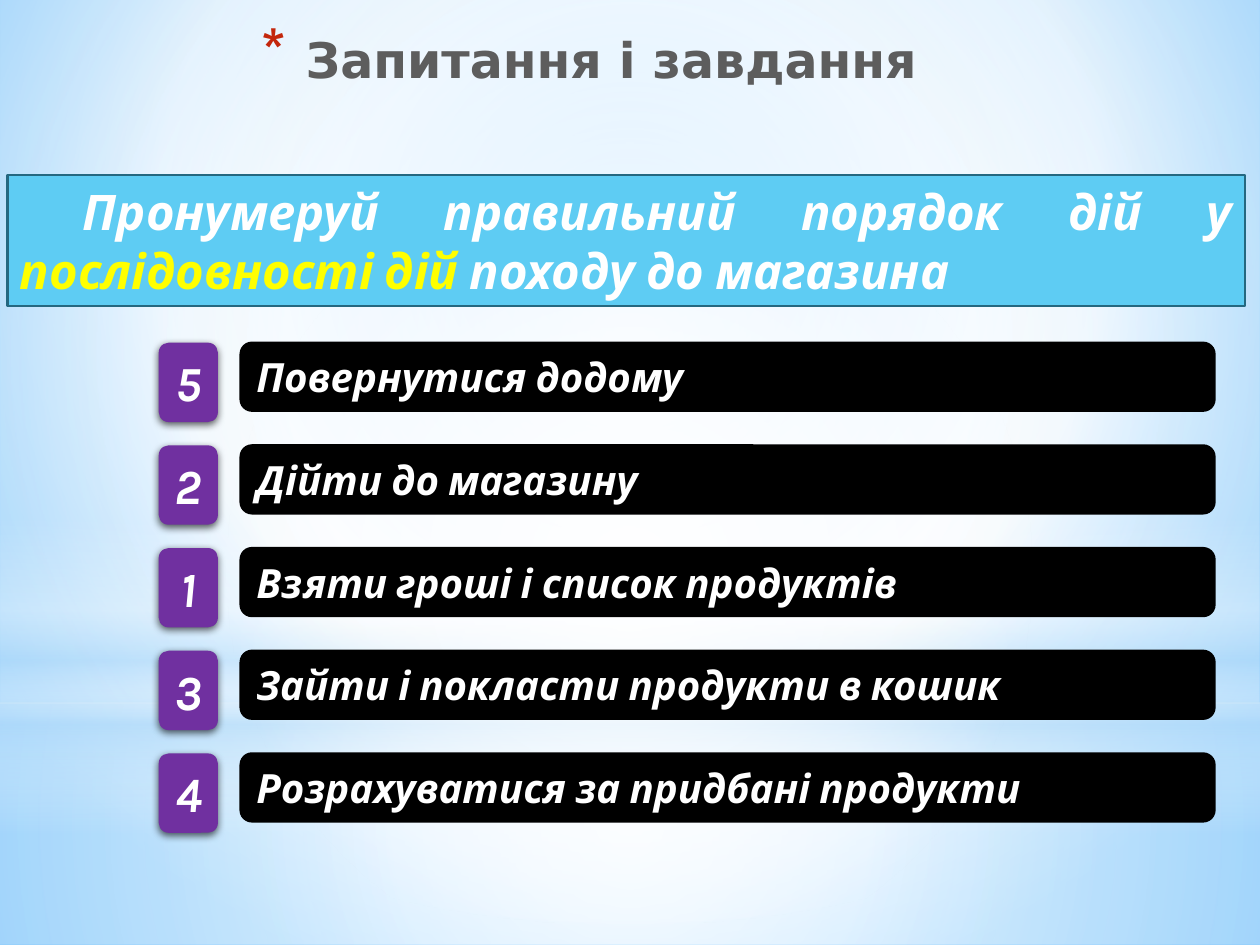
from lxml import etree
from pptx import Presentation
from pptx.dml.color import RGBColor
from pptx.enum.shapes import MSO_SHAPE as SHAPE
from pptx.enum.text import MSO_ANCHOR, MSO_AUTO_SIZE, PP_ALIGN as ALIGN
from pptx.oxml.ns import qn
from pptx.util import Inches, Pt

WHITE, SKY = "FFFFFF", "B4DCFA"
CENTER = (50, 50, 50, 50)
FIRST_ROW, ROW_STEP = 2.72, 0.815
ACTIONS = [
    ("5", "Повернутися додому"),
    ("2", "Дійти до магазину"),
    ("1", "Взяти гроші і список продуктів"),
    ("3", "Зайти і покласти продукти в кошик"),
    ("4", "Розрахуватися за придбані продукти"),
]


def rgb(color):
    return RGBColor.from_string(color)


def add_xml(parent, tag, **attrs):
    el = etree.SubElement(parent, qn(tag))
    for name, value in attrs.items():
        el.set(name, str(value))
    return el


def add_color(parent, color, alpha=100):
    el = add_xml(parent, "a:srgbClr", val=color)
    if alpha < 100:
        add_xml(el, "a:alpha", val=alpha * 1000)


def set_gradient(fill, owner, stops, focus=None):
    """Fill with (position, colour, opacity) stops, round a focus or downwards."""
    fill.solid()
    fill.fore_color.rgb = rgb(WHITE)
    solid = owner.find(qn("a:solidFill"))
    grad = etree.Element(qn("a:gradFill"), rotWithShape="1")
    stop_list = add_xml(grad, "a:gsLst")
    for pos, color, alpha in stops:
        add_color(add_xml(stop_list, "a:gs", pos=pos * 1000), color, alpha)
    if focus:
        path = add_xml(grad, "a:path", path="circle")
        sides = {side: share * 1000 for side, share in zip("ltrb", focus)}
        add_xml(path, "a:fillToRect", **sides)
    else:
        add_xml(grad, "a:lin", ang=90 * 60000, scaled=0)
    owner.replace(solid, grad)


def add_box(slide, kind, box, fill=None, line=None):
    sp = slide.shapes.add_shape(kind, *map(Inches, box))
    sp.shadow.inherit = False
    if fill:
        sp.fill.solid()
        sp.fill.fore_color.rgb = rgb(fill)
    if line:
        sp.line.color.rgb = rgb(line)
        sp.line.width = Pt(1.25)
    else:
        sp.line.fill.background()
    return sp


def add_glow(slide, kind, top, height, stops, focus=CENTER):
    sp = add_box(slide, kind, (0, top, 10, height))
    set_gradient(sp.fill, sp._element.spPr, stops, focus)


def add_text(sp, *parts, size=28, font="Karla", italic=True, align=ALIGN.JUSTIFY):
    """Write (text, colour) parts as the runs of one bold paragraph."""
    tf = sp.text_frame
    tf.word_wrap = True
    p = tf.paragraphs[0]
    p.alignment = align
    for text, color in parts:
        r = p.add_run()
        r.text = text
        r.font.name, r.font.size = font, Pt(size)
        r.font.bold, r.font.italic = True, italic
        r.font.color.rgb = rgb(color)
    return p


def add_background(slide):
    fill = slide.background.fill
    fill.solid()
    bg_pr = slide._element.cSld.find(qn("p:bg")).find(qn("p:bgPr"))
    set_gradient(fill, bg_pr, [(0, "9ED5FF", 100), (60, WHITE, 100),
                               (100, "5BB9FF", 100)], (20, 10, 20, 60))
    add_glow(slide, SHAPE.RECTANGLE, 5.58, 1.92,
             [(0, WHITE, 91), (37, WHITE, 76), (100, SKY, 79)])
    add_glow(slide, SHAPE.RECTANGLE, 0, 5.58,
             [(0, WHITE, 89), (48, WHITE, 62), (100, SKY, 79)])
    add_glow(slide, SHAPE.RECTANGLE, 4.12, 2.5,
             [(0, WHITE, 0), (29, WHITE, 30), (45, SKY, 40),
              (55, WHITE, 26), (65, SKY, 60), (100, WHITE, 0)], None)
    add_glow(slide, SHAPE.OVAL, 1.75, 5.58, [(0, WHITE, 100), (56, WHITE, 0)])


def add_title(slide):
    title = slide.shapes.title
    slide.shapes._spTree.append(title._element)  # in front of the background
    title.left, title.top, title.width, title.height = map(
        Inches, (0.96, 0.18, 7.43, 0.58))
    title.text_frame.vertical_anchor = MSO_ANCHOR.MIDDLE
    p = add_text(title, ("Запитання і завдання", "5D5D5D"),
                 font="DejaVu Sans", italic=False, align=ALIGN.CENTER)
    p_pr = p._p.get_or_add_pPr()
    p_pr.set("marL", str(Inches(0.35)))
    p_pr.set("indent", str(-Inches(0.35)))
    add_color(add_xml(p_pr, "a:buClr"), "C3260C")
    add_xml(p_pr, "a:buSzPct", val=128000)
    add_xml(p_pr, "a:buChar", char="*")


def add_task(slide):
    sp = add_box(slide, SHAPE.RECTANGLE, (0.06, 1.39, 9.82, 1.04),
                 "5ECCF3", "256880")
    p = add_text(sp, ("Пронумеруй правильний порядок дій у ", WHITE),
                 ("послідовності дій", "FFFF00"), (" походу до магазина", WHITE))
    p._p.get_or_add_pPr().set("indent", str(Inches(0.5)))
    sp.text_frame.auto_size = MSO_AUTO_SIZE.SHAPE_TO_FIT_TEXT


def add_action(slide, top, text):
    sp = add_box(slide, SHAPE.ROUNDED_RECTANGLE, (1.91, top, 7.73, 0.54),
                 "000000", "000000")
    add_text(sp, (text, WHITE), size=23)
    sp.text_frame.auto_size = MSO_AUTO_SIZE.SHAPE_TO_FIT_TEXT


def add_number(slide, top, number):
    sp = add_box(slide, SHAPE.ROUNDED_RECTANGLE, (1.26, top, 0.47, 0.63), "7030A0")
    effects = sp._element.spPr.find(qn("a:effectLst"))
    shadow = add_xml(effects, "a:outerShdw", blurRad=Pt(4.5), dist=Pt(1.5),
                     dir=90 * 60000, rotWithShape=0)
    add_color(shadow, "000000", 63)
    add_text(sp, (number, WHITE), align=ALIGN.CENTER)
    sp.text_frame.auto_size = MSO_AUTO_SIZE.SHAPE_TO_FIT_TEXT


def main():
    prs = Presentation()
    prs.slide_width, prs.slide_height = Inches(10), Inches(7.5)
    slide = prs.slides.add_slide(prs.slide_layouts[5])
    add_background(slide)
    add_title(slide)
    add_task(slide)
    for row, (number, text) in enumerate(ACTIONS):
        top = FIRST_ROW + row * ROW_STEP
        add_action(slide, top, text)
        add_number(slide, top, number)
    prs.save("out.pptx")


if __name__ == "__main__":
    main()
